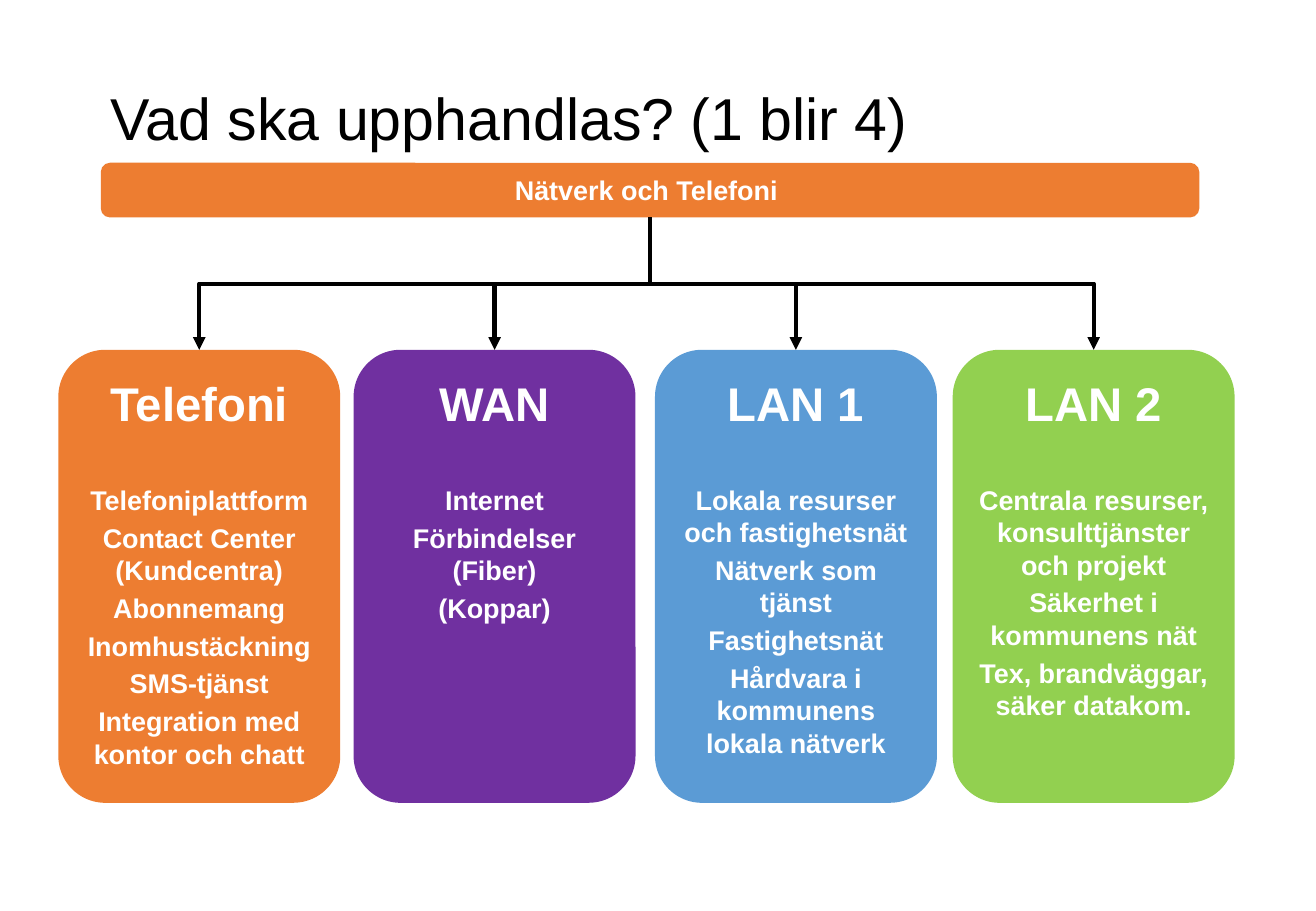
from lxml import etree
from pptx import Presentation
from pptx.dml.color import RGBColor
from pptx.enum.shapes import MSO_CONNECTOR as Connector, MSO_SHAPE as Shape
from pptx.enum.text import MSO_ANCHOR as Anchor, MSO_AUTO_SIZE as AutoSize, PP_ALIGN as Align
from pptx.oxml.ns import qn
from pptx.util import Inches, Pt

COLORS = {
    "black": "000000",
    "white": "FFFFFF",
    "orange": "ED7D31",
    "purple": "7030A0",
    "blue": "5B9BD5",
    "green": "92D050",
}
FONT = "Arial"
BANNER_CENTER, BANNER_BOTTOM = 5.35, 1.79
CARD_TOP, CARD_WIDTH, CARD_HEIGHT = 2.88, 2.32, 3.73
CARDS = [
    (0.48, "orange", "Telefoni", [
        "Telefoniplattform", "Contact Center (Kundcentra)", "Abonnemang",
        "Inomhustäckning", "SMS-tjänst", "Integration med kontor och chatt"]),
    (2.91, "purple", "WAN", ["Internet", "Förbindelser (Fiber)", "(Koppar)"]),
    (5.39, "blue", "LAN 1", [
        "Lokala resurser och fastighetsnät", "Nätverk som tjänst",
        "Fastighetsnät", "Hårdvara i kommunens lokala nätverk"]),
    (7.84, "green", "LAN 2", [
        "Centrala resurser, konsulttjänster och projekt",
        "Säkerhet i kommunens nät", "Tex, brandväggar, säker datakom."]),
]


def color(name):
    return RGBColor.from_string(COLORS[name])


def style_para(para, size, color_name, bold, align, before=0):
    para.alignment = align
    para.space_before = Pt(before)
    para.font.name = FONT
    para.font.size = Pt(size)
    para.font.bold = bold
    para.font.color.rgb = color(color_name)


def set_title(page, text):
    title = page.shapes.title
    title.left, title.top = Inches(0.81), Inches(0.67)
    title.width, title.height = Inches(9.21), Inches(1.25)
    frame = title.text_frame
    frame.text = text
    frame.auto_size = AutoSize.NONE
    frame.vertical_anchor = Anchor.TOP
    frame.margin_top = Inches(0.07)
    para = frame.paragraphs[0]
    style_para(para, 35, "black", False, Align.LEFT)
    para.line_spacing = 0.9


def add_rounded_box(page, left, top, width, height, fill):
    box = page.shapes.add_shape(Shape.ROUNDED_RECTANGLE, Inches(left), Inches(top),
                                Inches(width), Inches(height))
    box.shadow.inherit = False
    box.fill.solid()
    box.fill.fore_color.rgb = color(fill)
    box.line.fill.background()
    box.text_frame.word_wrap = True
    return box


def add_banner(page, text):
    box = add_rounded_box(page, 0.83, 1.34, 9.04, 0.45, "orange")
    frame = box.text_frame
    frame.text = text
    frame.vertical_anchor = Anchor.MIDDLE
    frame.margin_right = Inches(0.16)
    style_para(frame.paragraphs[0], 16, "white", True, Align.CENTER)


def add_card(page, left, fill, heading, items):
    box = add_rounded_box(page, left, CARD_TOP, CARD_WIDTH, CARD_HEIGHT, fill)
    frame = box.text_frame
    frame.vertical_anchor = Anchor.TOP
    frame.margin_top = Inches(0.09)
    frame.margin_left = frame.margin_right = Inches(0.09)
    frame.text = heading
    style_para(frame.paragraphs[0], 28, "white", True, Align.CENTER)
    for index, item in enumerate(items):
        para = frame.add_paragraph()
        para.text = item
        style_para(para, 16, "white", True, Align.CENTER, 3.2 if index else 31)


def add_branch(page, target):
    drop = CARD_TOP - BANNER_BOTTOM
    spread = abs(target - BANNER_CENTER)
    middle_x = (target + BANNER_CENTER) / 2
    middle_y = (CARD_TOP + BANNER_BOTTOM) / 2
    goes_right = target > BANNER_CENTER
    ends = [middle_x - drop / 2, middle_x + drop / 2]
    if goes_right:
        ends.reverse()
    branch = page.shapes.add_connector(
        Connector.ELBOW, Inches(ends[0]), Inches(middle_y - spread / 2),
        Inches(ends[1]), Inches(middle_y + spread / 2))
    branch.line.color.rgb = color("black")
    branch.line.width = Pt(2.5)
    properties = branch._element.spPr
    degrees = 270 if goes_right else 90
    properties.find(qn("a:xfrm")).set("rot", str(degrees * 60000))
    etree.SubElement(properties.find(qn("a:ln")), qn("a:tailEnd"), type="triangle")
    etree.SubElement(properties, qn("a:effectLst"))


def main():
    deck = Presentation()
    deck.slide_width, deck.slide_height = Inches(10.83), Inches(7.5)
    page = deck.slides.add_slide(deck.slide_layouts[5])
    set_title(page, "Vad ska upphandlas? (1 blir 4)")
    add_banner(page, "Nätverk och Telefoni")
    for left, fill, heading, items in CARDS:
        add_card(page, left, fill, heading, items)
        add_branch(page, left + CARD_WIDTH / 2)
    deck.save("out.pptx")


if __name__ == "__main__":
    main()
